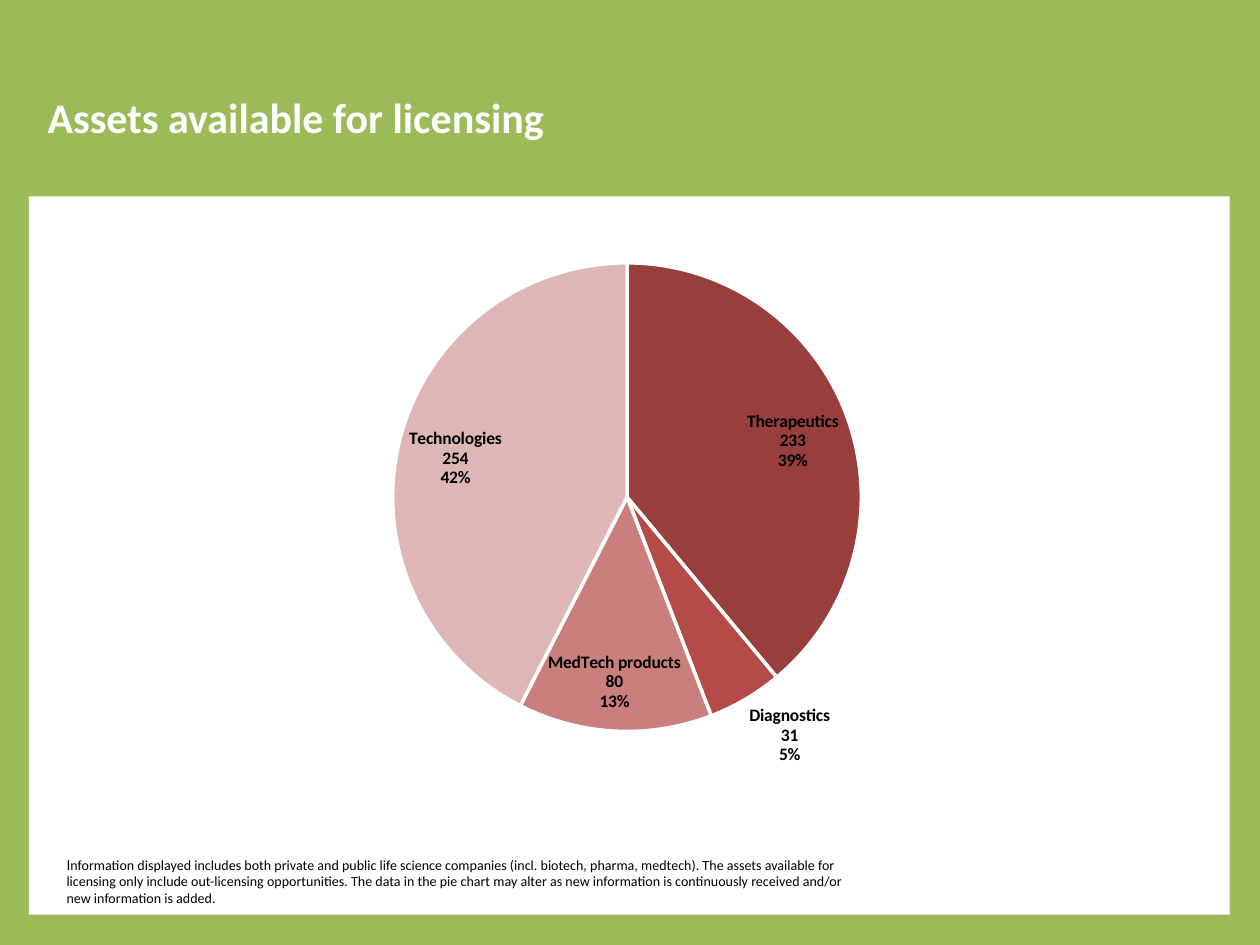
"""Build the slide on assets available for licensing, with a pie chart."""
from lxml import etree
from pptx import Presentation
from pptx.chart.data import CategoryChartData
from pptx.dml.color import RGBColor
from pptx.enum.chart import XL_CHART_TYPE, XL_LABEL_POSITION
from pptx.enum.shapes import MSO_SHAPE
from pptx.enum.text import MSO_ANCHOR
from pptx.oxml import parse_xml
from pptx.oxml.ns import nsdecls, qn
from pptx.util import Inches, Pt

PIE = XL_CHART_TYPE.PIE
BEST_FIT = XL_LABEL_POSITION.BEST_FIT
RECTANGLE = MSO_SHAPE.RECTANGLE
MIDDLE = MSO_ANCHOR.MIDDLE

SLICES = [
    ("Therapeutics", 233, "983F3D"),
    ("Diagnostics", 31, "B44B48"),
    ("MedTech products", 80, "CA7F7D"),
    ("Technologies", 254, "DDB6B5"),
]
NOTE = [
    ("I", "Roboto"),
    ("nformation displayed includes both private and public life science companies "
     "(incl. biotech, pharma, medtech). The assets available for licensing only include "
     "out-licensing opportunities. The data in the pie chart may alter as new information "
     "is continuously received and/or new information is added.", "Calibri"),
]
PLOT = {"x": 0.29, "y": 0.03, "w": 0.4, "h": 0.82}


def color(value):
    return RGBColor.from_string(value)


def add_text(page, area, pieces, size, value, bold=False):
    box = page.shapes.add_textbox(*map(Inches, area))
    box.text_frame.word_wrap = True
    box.text_frame.vertical_anchor = MIDDLE
    para = box.text_frame.paragraphs[0]
    for text, font_name in pieces:
        span = para.add_run()
        span.text = text
        span.font.name = font_name
        span.font.size = Pt(size)
        span.font.bold = bold
        span.font.color.rgb = color(value)


deck = Presentation()
deck.slide_width, deck.slide_height = Inches(10), Inches(7.5)
page = deck.slides.add_slide(deck.slide_layouts[6])
page.background.fill.solid()
page.background.fill.fore_color.rgb = color("9BBB59")

panel = page.shapes.add_shape(RECTANGLE, *map(Inches, (0.23, 1.56, 9.53, 5.7)))
panel.shadow.inherit = False
panel.fill.solid()
panel.fill.fore_color.rgb = color("FFFFFF")
panel.line.fill.background()

add_text(page, (0.28, 0.3, 9, 1.25), [("Assets available for licensing", "Calibri")],
         24, "FFFFFF", bold=True)
add_text(page, (0.43, 6.66, 6.5, 0.67), NOTE, 8, "000000")

data = CategoryChartData()
data.categories = [name for name, count, shade in SLICES]
data.add_series("Series 1", [count for name, count, shade in SLICES])
chart = page.shapes.add_chart(PIE, *map(Inches, (0.42, 1.94, 9.3, 4.56)), data).chart
chart.has_legend = False
chart.has_title = False
chart.font.name = "Calibri"
chart.font.size = Pt(10)
chart.font.color.rgb = color("000000")

plot = chart.plots[0]
plot.vary_by_categories = True
for index, (name, count, shade) in enumerate(SLICES):
    wedge = plot.series[0].points[index].format
    wedge.fill.solid()
    wedge.fill.fore_color.rgb = color(shade)
    wedge.line.color.rgb = color("FFFFFF")
    wedge.line.width = Pt(2)

labels = plot.series[0].data_labels
labels.show_category_name = True
labels.show_value = True
labels.show_percentage = True
labels.position = BEST_FIT
labels.font.name = "Calibri"
labels.font.size = Pt(10)
labels.font.bold = True
labels.font.color.rgb = color("000000")
separator = etree.Element(qn("c:separator"))
separator.text = "\n"
labels._element.find(qn("c:showBubbleSize")).addnext(separator)

plot_area = chart._chartSpace.chart.plotArea
for old_layout in plot_area.findall(qn("c:layout")):
    plot_area.remove(old_layout)
sides = "".join(f'<c:{side} val="{share}"/>' for side, share in PLOT.items())
plot_area.insert(0, parse_xml(
    f'<c:layout {nsdecls("c")}><c:manualLayout><c:layoutTarget val="inner"/>'
    f'<c:xMode val="edge"/><c:yMode val="edge"/>{sides}</c:manualLayout></c:layout>'))

deck.save("out.pptx")
